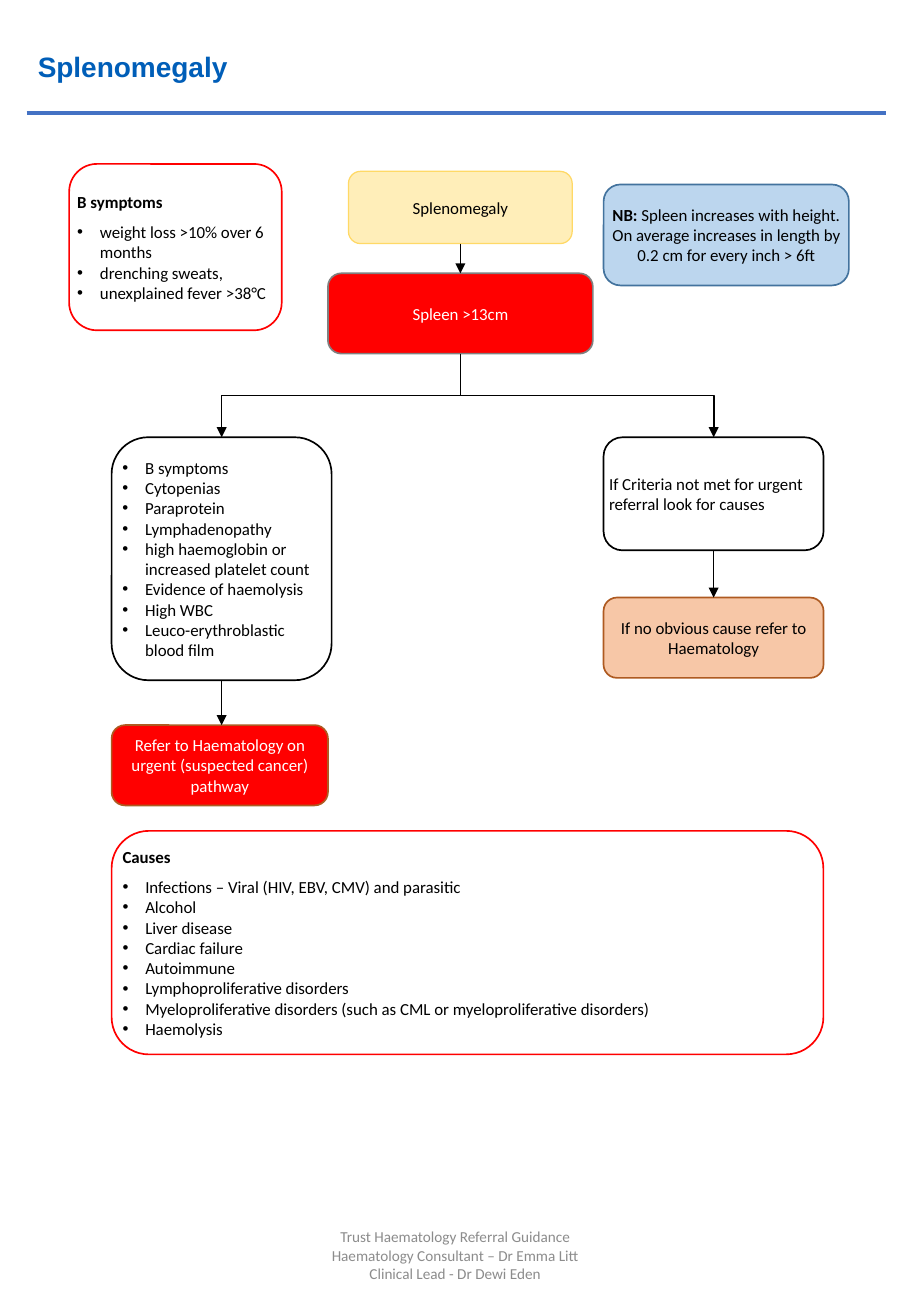
from dataclasses import dataclass

from pptx import Presentation
from pptx.dml.color import RGBColor
from pptx.enum.shapes import MSO_CONNECTOR as Link, MSO_SHAPE as Preset
from pptx.enum.text import MSO_ANCHOR as Anchor, PP_ALIGN as Align
from pptx.oxml.ns import qn
from pptx.oxml.xmlchemy import OxmlElement as Element
from pptx.util import Pt

TOP, BOTTOM = 0, 2
BLACK, WHITE, RED, BROWN = "000000", "FFFFFF", "FF0000", "AE5A21"


def color(value):
    return RGBColor.from_string(value)


def apply(target, values):
    for name, value in values.items():
        setattr(target, name, value)


@dataclass
class Line:
    text: str = ""
    lead: str = ""
    bullet: bool = False
    after: float = 0


def bullets(*texts):
    return [Line(text, bullet=True) for text in texts]


class Flowchart:
    font = "Calibri"
    size = 10
    indent = 13.5
    border = 1

    def __init__(self, slide):
        self.slide = slide

    def fill_text(self, shape, lines, ink, align, inset, **font):
        frame = shape.text_frame
        sides, ends = (Pt(length) for length in inset)
        apply(frame, dict(word_wrap=True, vertical_anchor=Anchor.MIDDLE,
                          margin_left=sides, margin_right=sides,
                          margin_top=ends, margin_bottom=ends))
        look = dict(name=self.font, size=Pt(self.size), bold=False) | font
        for index, line in enumerate(lines):
            paragraph = frame.add_paragraph() if index else frame.paragraphs[0]
            apply(paragraph, dict(alignment=align, space_after=Pt(line.after)))
            if line.bullet:
                self.bullet(paragraph)
            for text, style in ((line.lead, {"bold": True}), (line.text, {})):
                if text:
                    run = paragraph.add_run()
                    run.text = text
                    apply(run.font, look | style)
                    run.font.color.rgb = color(ink)

    def bullet(self, paragraph):
        properties = paragraph._p.get_or_add_pPr()
        properties.set("marL", str(Pt(self.indent)))
        properties.set("indent", str(-Pt(self.indent)))
        for tag, name, value in (("a:buFont", "typeface", "Arial"),
                                 ("a:buChar", "char", "•")):
            mark = Element(tag)
            mark.set(name, value)
            properties.append(mark)

    def label(self, at, lines, ink, align=Align.LEFT, inset=(7.2, 3.6), **font):
        label = self.slide.shapes.add_textbox(*map(Pt, at))
        self.fill_text(label, lines, ink, align, inset, **font)

    def box(self, at, lines, fill=WHITE, outline=BLACK, ink=BLACK,
            align=Align.CENTER, border=border):
        box = self.slide.shapes.add_shape(Preset.ROUNDED_RECTANGLE, *map(Pt, at))
        box.shadow.inherit = False
        box.fill.solid()
        box.fill.fore_color.rgb = color(fill)
        box.line.color.rgb = color(outline)
        box.line.width = Pt(border)
        self.fill_text(box, lines, ink, align, (0, 0))
        return box

    def line(self, start, end, ink=BLACK, width=border, kind=Link.STRAIGHT):
        line = self.slide.shapes.add_connector(kind, *map(Pt, (*start, *end)))
        line.line.color.rgb = color(ink)
        line.line.width = Pt(width)
        line._element.spPr.append(Element("a:effectLst"))
        return line

    def arrow(self, start, end, kind=Link.STRAIGHT):
        arrow = self.line(start, end, kind=kind)
        head = Element("a:tailEnd")
        head.set("type", "triangle")
        arrow.line._get_or_add_ln().append(head)
        return arrow

    def down(self, upper, lower):
        middle = (upper.left + upper.width / 2) / Pt(1)
        start = middle, (upper.top + upper.height) / Pt(1)
        arrow = self.arrow(start, (middle, lower.top / Pt(1)))
        arrow.begin_connect(upper, BOTTOM)
        if upper.left + upper.width // 2 == lower.left + lower.width // 2:
            arrow.end_connect(lower, TOP)

    def branch(self, upper, lower):
        arrow = self.arrow((0, 0), (1, 1), Link.ELBOW)
        arrow.begin_connect(upper, BOTTOM)
        arrow.end_connect(lower, TOP)
        start = upper.left + upper.width // 2
        end = lower.left + lower.width // 2
        top = upper.top + upper.height
        drop, reach = lower.top - top, abs(end - start)
        apply(arrow, dict(left=(start + end - drop) // 2,
                          top=top + (drop - reach) // 2,
                          width=drop, height=reach))
        turn = arrow._element.spPr.find(qn("a:xfrm"))
        rightward = end > start
        turn.set("rot", "16200000" if rightward else "5400000")
        turn.set("flipH", "1" if rightward else "0")
        turn.set("flipV", "0")


def main():
    deck = Presentation()
    apply(deck, dict(slide_width=Pt(540), slide_height=Pt(780)))
    chart = Flowchart(deck.slides.add_slide(deck.slide_layouts[6]))
    left, right, width, step = 66.2, 357.8, 130.4, 47.6

    chart.label((16.6, 15.1, 377.3, 48.2), [Line("Splenomegaly")], "005EB8",
                inset=(5.8, 2.9), name="Arial", size=Pt(16.6), bold=True)
    chart.line((15.8, 67), (524.9, 67), "4472C4", 2.75)

    finding = chart.box((206.6, 101.6, 132.6, 42.8), [Line("Splenomegaly")],
                        "FFEEB9", "FFD966", border=0.75)
    enlarged = chart.box((194.4, 162, 157, step), [Line("Spleen >13cm")],
                         RED, "808080", WHITE)
    not_met = chart.box(
        (right, 259.2, width, 67),
        [Line("If Criteria not met for urgent referral look for causes")],
        align=Align.LEFT)
    chart.box((left, 492.5, 421.9, 132.5), [
        Line(lead="Causes", after=6),
        *bullets("Infections – Viral (HIV, EBV, CMV) and parasitic", "Alcohol",
                 "Liver disease", "Cardiac failure", "Autoimmune",
                 "Lymphoproliferative disorders",
                 "Myeloproliferative disorders (such as CML or "
                 "myeloproliferative disorders)",
                 "Haemolysis"),
    ], outline=RED, align=Align.LEFT)
    criteria = chart.box((left, 259.2, width, 144), bullets(
        "B symptoms", "Cytopenias", "Paraprotein", "Lymphadenopathy",
        "high haemoglobin or increased platelet count",
        "Evidence of haemolysis", "High WBC", "Leuco-erythroblastic blood film",
    ), align=Align.LEFT)
    urgent = chart.box(
        (left, 429.8, 128.2, step),
        [Line("Refer to Haematology on urgent (suspected cancer) pathway")],
        RED, BROWN, WHITE)
    routine = chart.box((right, 354.2, width, step),
                        [Line("If no obvious cause refer to Haematology")],
                        "F7C7A7", BROWN)
    chart.box((41, 97.2, 126, 98.6), [
        Line(lead="B symptoms", after=6),
        *bullets("weight loss >10% over 6 months", "drenching sweats,",
                 "unexplained fever >38°C"),
    ], outline=RED, align=Align.LEFT)
    chart.box((right, 109.4, 145.4, 59.8), [
        Line("Spleen increases with height. On average increases in length "
             "by 0.2 cm for every inch > 6ft", lead="NB: "),
    ], "BCD6EE", "43739E")

    for upper, lower in ((finding, enlarged), (not_met, routine), (criteria, urgent)):
        chart.down(upper, lower)
    for outcome in (not_met, criteria):
        chart.branch(enlarged, outcome)

    chart.label((178.6, 722.9, 182.2, 41.8), [
        Line("Trust Haematology Referral Guidance"),
        Line("Haematology Consultant – Dr Emma Litt Clinical Lead - Dr Dewi Eden"),
    ], "8C8C8C", Align.CENTER, size=Pt(9))

    deck.save("out.pptx")


if __name__ == "__main__":
    main()
